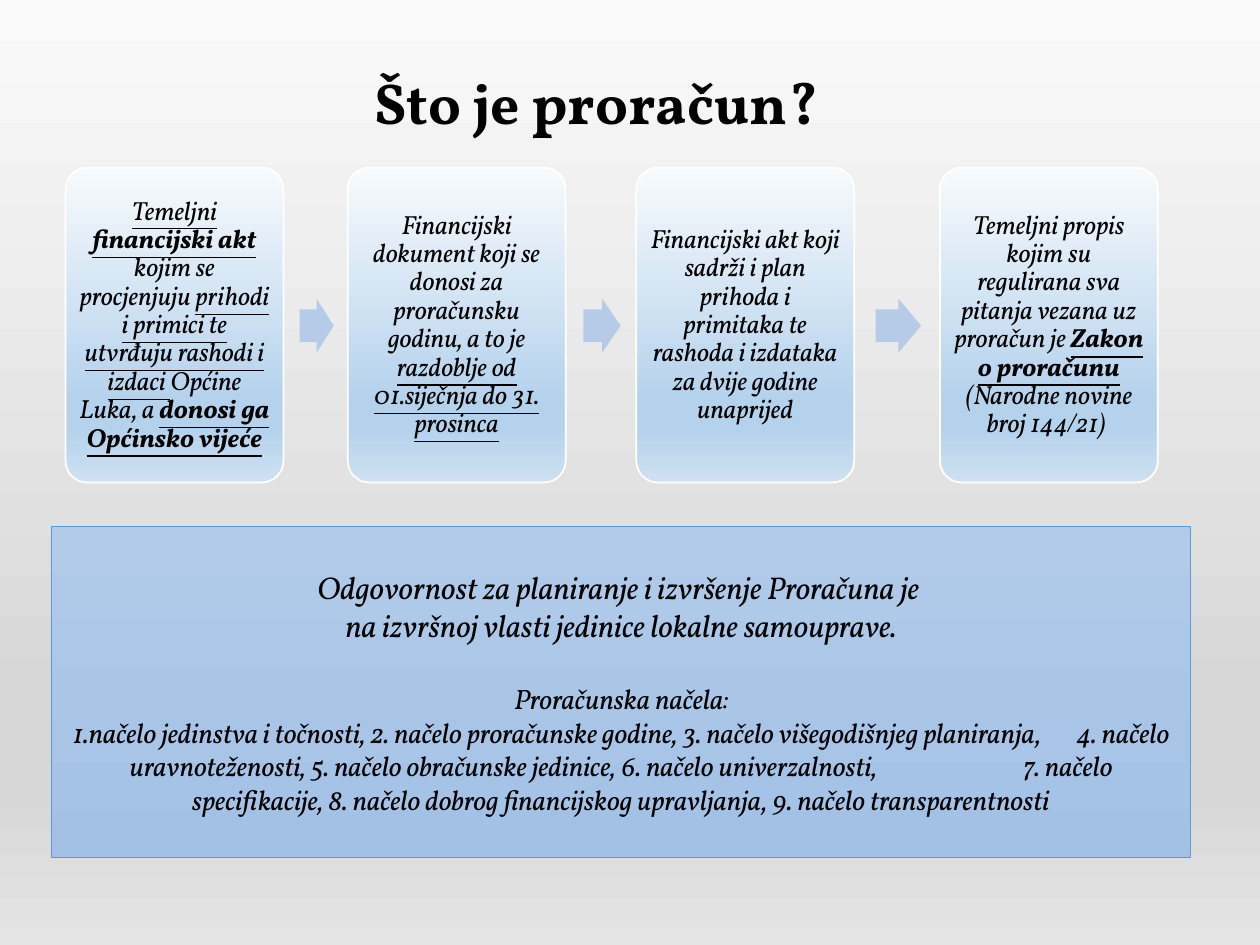
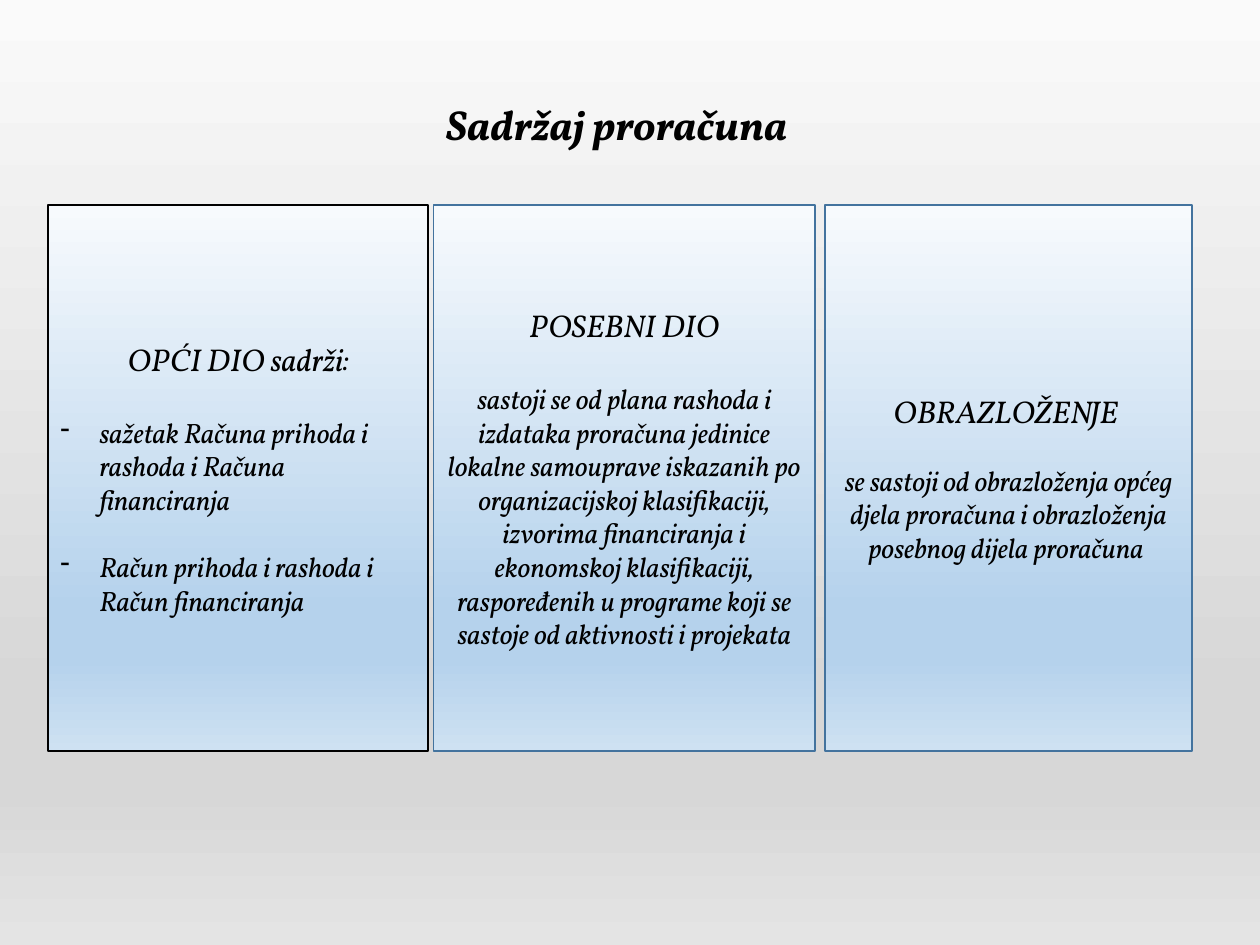
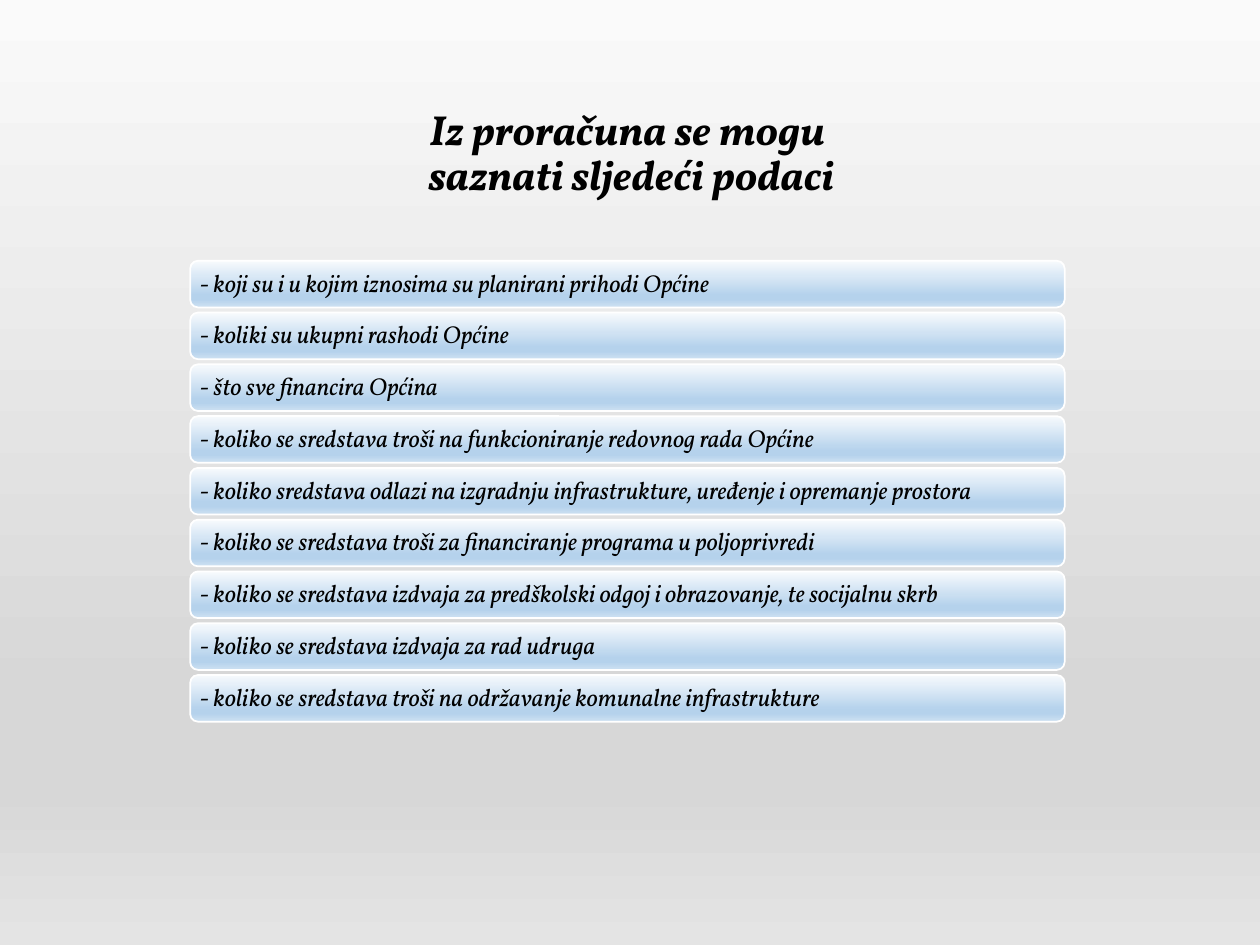
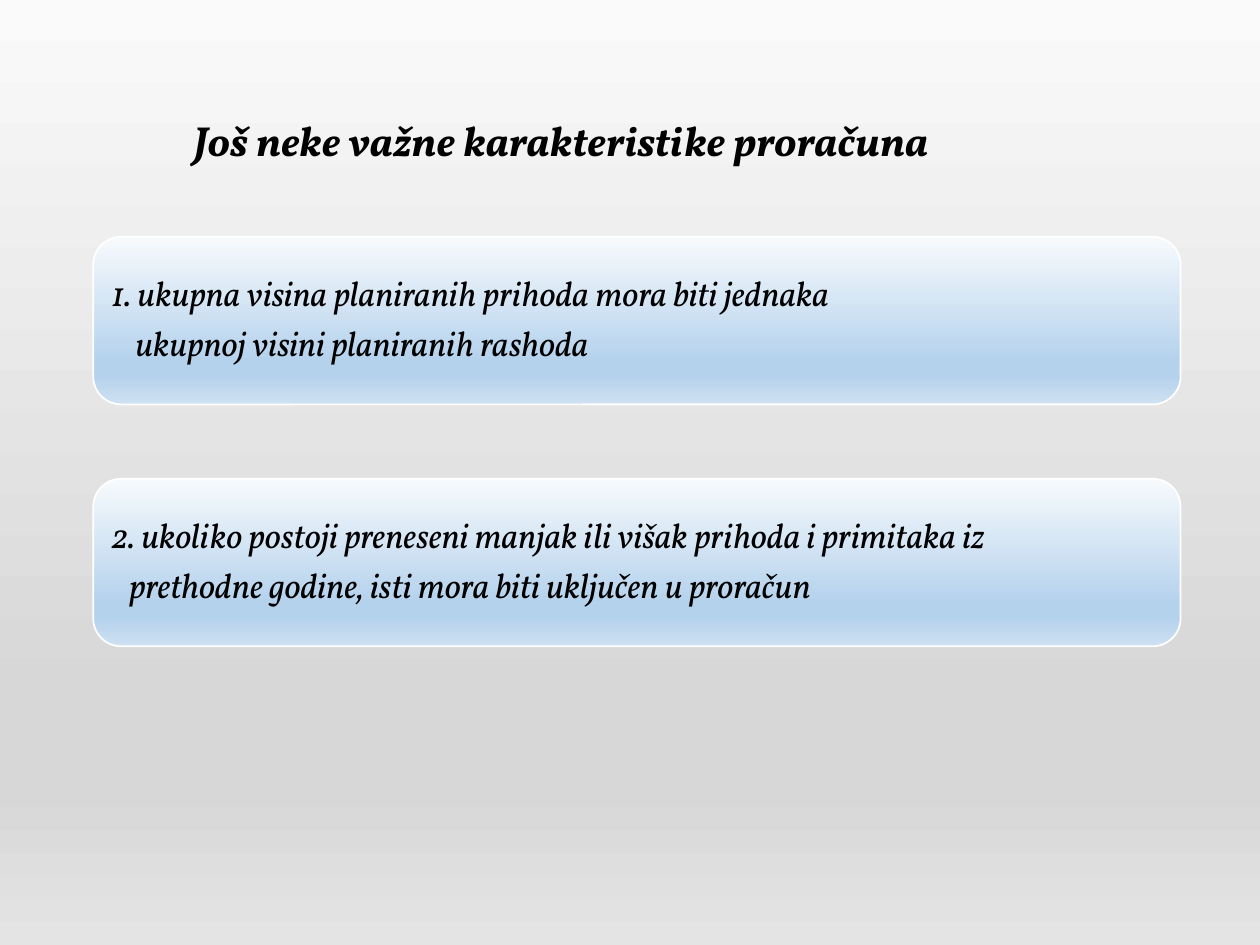
from dataclasses import dataclass
from typing import NamedTuple

from lxml.etree import SubElement as Sub
from pptx import Presentation
from pptx.dml.color import RGBColor as Rgb
from pptx.enum.shapes import MSO_SHAPE as Kind
from pptx.enum.text import MSO_ANCHOR as Anchor, MSO_AUTO_SIZE as Auto, PP_ALIGN as Align
from pptx.oxml.ns import qn
from pptx.util import Inches, Pt

FONT = "Vollkorn"
CELL = Inches(0.1)
COLS, ROWS = 100, 75
HEX = {
    "ink": "000000", "white": "FFFFFF", "edge": "43739E", "rim": "5B9BD5", "arrow": "B5CBE7",
    "mist": "FAFAFA", "grey": "D7D7D7", "ash": "E4E4E4",
    "ice": "F7FAFD", "sky": "B5D2EC", "haze": "CEE1F2",
    "pale": "B1CBE9", "deep": "A3C1E5",
}
PAGE = [(0, "mist"), (74, "grey"), (83, "grey"), (100, "ash")]
CARD = [(0, "ice"), (74, "sky"), (83, "sky"), (100, "haze")]
PANEL = [(0, "pale"), (100, "deep")]


class Box(NamedTuple):
    """A place on the grid, in cells."""
    col: float
    row: float
    cols: float
    rows: float


class Run(NamedTuple):
    """A piece of text with one look."""
    text: str
    bold: bool = False
    under: bool = False
    space: float = 0


@dataclass
class Para:
    """A paragraph; gap is in points, indent and hang in cells."""
    runs: list[Run]
    size: float
    ital: bool = True
    align: Align = Align.CENTER
    lead: float = 1
    gap: float = 0
    indent: float = 0
    hang: float = 0
    dash: str = ""


@dataclass
class Tile:
    """A gradient tile that holds text."""
    box: Box
    paras: list[Para]
    kind: Kind = Kind.ROUNDED_RECTANGLE
    stops: list = None
    edge: str = "white"
    width: float = 1
    pad: tuple = (0.6, 0.6)
    curve: float = None


def paint(fill, node, stops: list) -> None:
    """Fill from top to bottom with the given colour stops."""
    fill.gradient()
    fill.gradient_angle = 270
    listing = node.xpath(".//a:gsLst")[0]
    for stop in list(listing):
        listing.remove(stop)
    for share, name in stops:
        stop = Sub(listing, qn("a:gs"), pos=str(share * 1000))
        Sub(stop, qn("a:srgbClr"), val=HEX[name])


def place(shape, box: Box) -> None:
    """Move a shape to its cells."""
    shape.left, shape.top, shape.width, shape.height = (round(n * CELL) for n in box)


def write(frame, paras: list[Para]) -> None:
    """Write the paragraphs run by run."""
    frame.word_wrap = True
    frame.auto_size = Auto.NONE
    frame.vertical_anchor = Anchor.MIDDLE
    for i, para in enumerate(paras):
        line = frame.add_paragraph() if i else frame.paragraphs[0]
        line.alignment = para.align
        line.line_spacing = para.lead
        line.space_before = Pt(para.gap)
        props = line._p.get_or_add_pPr()
        if para.indent:
            props.set("marL", str(round(para.indent * CELL)))
            props.set("indent", str(round(-para.hang * CELL)))
        if para.dash:
            Sub(props, qn("a:buChar"), char=para.dash)
        for piece in para.runs:
            run = line.add_run()
            run.text = piece.text
            font = run.font
            font.name, font.size = FONT, Pt(para.size)
            font.bold, font.italic, font.underline = piece.bold, para.ital, piece.under
            font.color.rgb = Rgb.from_string(HEX["ink"])
            if piece.space:
                run._r.get_or_add_rPr().set("spc", str(round(piece.space * 100)))


def start(deck, box: Box, lines: list[str], size: float = 24, ital: bool = True):
    """Add a slide with its title."""
    slide = deck.slides.add_slide(deck.slide_layouts[5])
    place(slide.shapes.title, box)
    write(slide.shapes.title.text_frame,
          [Para([Run(text, bold=True)], size, ital, lead=0.9) for text in lines])
    return slide


def draw(slide, tile: Tile) -> None:
    """Draw one tile."""
    shape = slide.shapes.add_shape(tile.kind, 0, 0, CELL, CELL)
    place(shape, tile.box)
    shape.shadow.inherit = False
    paint(shape.fill, shape._element, tile.stops or CARD)
    shape.line.color.rgb = Rgb.from_string(HEX[tile.edge])
    shape.line.width = Pt(tile.width)
    if tile.curve:
        shape.adjustments[0] = tile.curve
    frame = shape.text_frame
    frame.margin_left = frame.margin_right = round(tile.pad[0] * CELL)
    frame.margin_top = frame.margin_bottom = round(tile.pad[1] * CELL)
    write(frame, tile.paras)


def point(slide, box: Box) -> None:
    """Draw a block arrow to the right."""
    arrow = slide.shapes.add_shape(Kind.RIGHT_ARROW, 0, 0, CELL, CELL)
    place(arrow, box)
    arrow.shadow.inherit = False
    arrow.adjustments[0], arrow.adjustments[1] = 0.6, 0.5
    arrow.fill.solid()
    arrow.fill.fore_color.rgb = Rgb.from_string(HEX["arrow"])
    arrow.line.fill.background()


def basics(deck) -> None:
    """Build the slide that says what a budget is."""
    slide = start(deck, Box(11.5, 3.5, 71.7, 9.8), ["Što je proračun?"], 33, False)
    steps = [
        (5.2, [
            Run("Temeljni ", under=True),
            Run("financijski akt ", True, True),
            Run("kojim se procjenjuju "),
            Run("prihodi i primici te utvrđuju rashodi i izdaci ", under=True),
            Run("Općine Luka, a "),
            Run("donosi ga Općinsko vijeće", True, True),
        ]),
        (27.6, [
            Run("Financijski dokument koji se donosi za proračunsku godinu, a to je "),
            Run("razdoblje od 01.siječnja do 31. prosinca", under=True),
        ]),
        (50.5, [
            Run("Financijski akt koji sadrži i plan prihoda i primitaka te rashoda "
                "i izdataka za dvije godine unaprijed"),
        ]),
        (74.6, [
            Run("Temeljni propis kojim su regulirana sva pitanja vezana uz proračun je "),
            Run("Zakon o proračunu ", True, True),
            Run("(Narodne novine broj 144/21) "),
        ]),
    ]
    wide, last = 17.3, None
    for col, runs in steps:
        if last is not None:
            free = col - last - wide
            point(slide, Box(last + wide + free / 4, 23.7, free * 0.53, 4.3))
        draw(slide, Tile(Box(col, 13.3, wide, 25), [Para(runs, 15, lead=0.9)], curve=0.1))
        last = col
    rules = [
        Run("1.načelo jedinstva i točnosti, 2. načelo proračunske godine, "
            "3. načelo višegodišnjeg planiranja,"),
        Run(" ", space=17),
        Run("4. načelo uravnoteženosti, 5. načelo obračunske jedinice, "
            "6. načelo univerzalnosti,"),
        Run(" ", space=80),
        Run("7. načelo specifikacije, 8. načelo dobrog financijskog upravljanja, "
            "9. načelo transparentnosti"),
    ]
    paras = [
        Para([Run("Odgovornost za planiranje i izvršenje Proračuna je ")], 18),
        Para([Run("na izvršnoj vlasti jedinice lokalne samouprave.")], 18),
        Para([Run("Proračunska načela:")], 16, gap=21.6),
        Para(rules, 16),
    ]
    draw(slide, Tile(Box(4.1, 41.8, 90.4, 26.3), paras, Kind.RECTANGLE, PANEL,
                     "rim", 0.5, (1, 0.5)))


def parts(deck) -> None:
    """Build the slide on the parts of a budget."""
    slide = start(deck, Box(13.1, 4.8, 71.7, 10.5), ["Sadržaj proračuna"])
    items = [
        ("sažetak Računa prihoda i rashoda i Računa financiranja", 21.6),
        ("Račun prihoda i rashoda i Račun financiranja", 19.2),
    ]
    bullets = [Para([Run(text)], 16, align=Align.LEFT, gap=gap, indent=3.1, hang=3.1, dash="-")
               for text, gap in items]
    special = ("sastoji se od plana rashoda i izdataka proračuna jedinice lokalne samouprave "
               "iskazanih po organizacijskoj klasifikaciji, izvorima financiranja i "
               "ekonomskoj klasifikaciji, raspoređenih u programe koji se sastoje od "
               "aktivnosti i projekata")
    reasons = ("se sastoji od obrazloženja općeg djela proračuna i obrazloženja "
               "posebnog dijela proračuna ")
    panels = [
        (3.8, 30.2, "ink", "OPĆI DIO sadrži:", bullets),
        (34.4, 30.3, "edge", "POSEBNI DIO", [Para([Run(special)], 16, gap=21.6)]),
        (65.5, 29.1, "edge", "OBRAZLOŽENJE ", [Para([Run(reasons)], 16, gap=19.2)]),
    ]
    for col, cols, edge, head, body in panels:
        draw(slide, Tile(Box(col, 16.3, cols, 43.3), [Para([Run(head)], 18), *body],
                         Kind.RECTANGLE, edge=edge, pad=(1, 0.5)))


def facts(deck) -> None:
    """Build the slide on what a budget tells."""
    slide = start(deck, Box(5.1, 7.6, 90, 9.3),
                  ["Iz proračuna se mogu ", "saznati sljedeći podaci"])
    lines = [
        "koji su i u kojim iznosima su planirani prihodi Općine",
        "koliki su ukupni rashodi Općine",
        "što sve financira Općina",
        "koliko se sredstava troši na funkcioniranje redovnog rada Općine",
        "koliko sredstava odlazi na izgradnju infrastrukture, uređenje i opremanje prostora",
        "koliko se sredstava troši za financiranje programa u poljoprivredi",
        "koliko se sredstava izdvaja za predškolski odgoj i obrazovanje, te socijalnu skrb",
        "koliko se sredstava izdvaja za rad udruga",
        "koliko se sredstava troši na održavanje komunalne infrastrukture",
    ]
    for i, text in enumerate(lines):
        para = Para([Run(f"- {text}")], 14, align=Align.LEFT, lead=0.9)
        draw(slide, Tile(Box(15.1, 20.7 + i * 4.11, 69.4, 3.7), [para]))


def traits(deck) -> None:
    """Build the slide on further traits of a budget."""
    slide = start(deck, Box(9.8, 6.9, 69.4, 8.8), ["Još neke važne karakteristike proračuna"])
    notes = [
        ("1. ukupna visina planiranih prihoda mora biti jednaka",
         "ukupnoj visini planiranih rashoda", 1.9),
        ("2. ukoliko postoji preneseni manjak ili višak prihoda i primitaka iz",
         "prethodne godine, isti mora biti uključen u proračun", 1.4),
    ]
    for i, (first, then, indent) in enumerate(notes):
        paras = [
            Para([Run(first)], 20, align=Align.LEFT, lead=0.9),
            Para([Run(then)], 20, align=Align.LEFT, lead=0.9, gap=7, indent=indent),
        ]
        draw(slide, Tile(Box(7.4, 18.8 + i * 19.2, 86.3, 13.3), paras, pad=(0.8, 0.8)))


def main() -> None:
    """Build and save the deck."""
    deck = Presentation()
    deck.slide_width, deck.slide_height = COLS * CELL, ROWS * CELL
    master = deck.slide_master
    paint(master.background.fill, master.element.cSld, PAGE)
    for build in (basics, parts, facts, traits):
        build(deck)
    deck.save("out.pptx")


if __name__ == "__main__":
    main()
